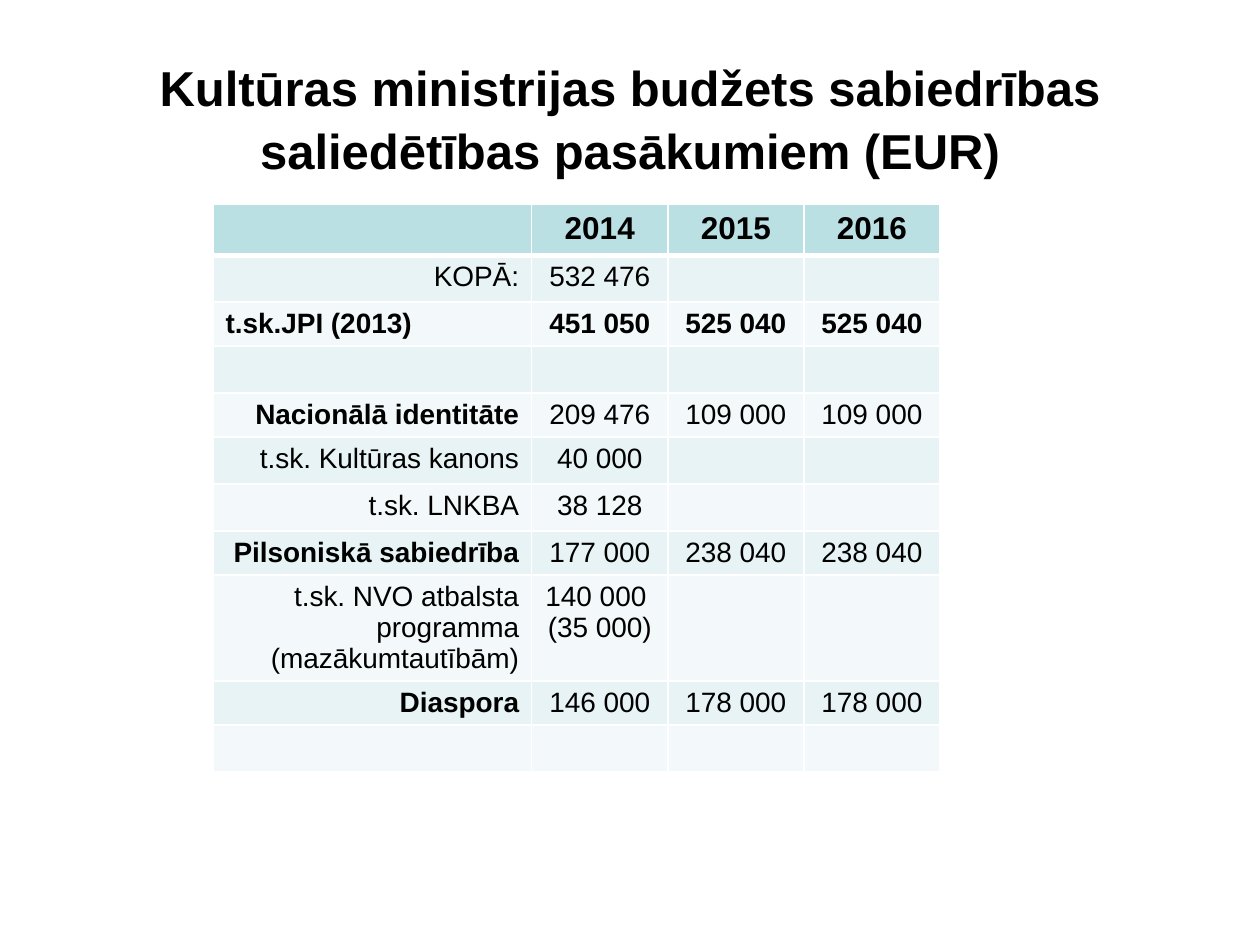
from typing import NamedTuple

from lxml.etree import SubElement as Sub
from pptx import Presentation as Deck
from pptx.dml.color import RGBColor
from pptx.enum.text import MSO_ANCHOR as Anchor, PP_ALIGN as Align
from pptx.oxml.ns import qn
from pptx.util import Inches, Pt

BLACK = RGBColor(0x00, 0x00, 0x00)
WHITE = RGBColor(0xFF, 0xFF, 0xFF)
TEAL = RGBColor(0xBB, 0xE0, 0xE3)
BANDS = (RGBColor(0xF3, 0xF9, 0xFA), RGBColor(0xE7, 0xF3, 0xF4))

TITLE = "Kultūras ministrijas budžets sabiedrības saliedētības pasākumiem (EUR)"
WIDTHS = (2.53, 1.08, 1.08, 1.08)


class Line(NamedTuple):
    label: str = ""
    sums: tuple = ("", "", "")
    strong: bool = False
    whole: bool = False
    side: Align = Align.RIGHT
    height: float = 0.35
    size: int = 16


LINES = (
    Line("", ("2014", "2015", "2016"), whole=True, height=0.38, size=18),
    Line("KOPĀ:", ("532 476", "", "")),
    Line("t.sk.JPI (2013)", ("451 050", "525 040", "525 040"),
         strong=True, whole=True, side=Align.LEFT),
    Line(),
    Line("Nacionālā identitāte", ("209 476", "109 000", "109 000"), strong=True),
    Line("t.sk. Kultūras kanons", ("40 000", "", "")),
    Line("t.sk. LNKBA", ("38 128", "", "")),
    Line("Pilsoniskā sabiedrība", ("177 000", "238 040", "238 040"), strong=True),
    Line("t.sk. NVO atbalsta programma (mazākumtautībām)",
         ("140 000 \n(35 000)", "", ""), height=0.84),
    Line("Diaspora", ("146 000", "178 000", "178 000"), strong=True),
    Line(),
)


def style(para, size: int, bold: bool, side: Align) -> None:
    para.alignment = side
    form = {"name": "Arial", "size": Pt(size), "bold": bold}
    for run in para.runs:
        for key, value in form.items():
            setattr(run.font, key, value)
        run.font.color.rgb = BLACK
    if not para.runs:
        Sub(para._p, qn("a:endParaRPr"), sz=str(size * 100))


def frame(cell, row: int) -> None:
    props = cell._tc.get_or_add_tcPr()
    wide = {"T": 3 if row == 1 else 1, "B": 3 if row == 0 else 1}
    for edge in "LRTB":
        line = Sub(props, qn(f"a:ln{edge}"), w=str(Pt(wide.get(edge, 1))))
        Sub(Sub(line, qn("a:solidFill")), qn("a:srgbClr"), val=str(WHITE))


def draw_row(table, row: int, line: Line) -> None:
    table.rows[row].height = Inches(line.height)
    for col, text in enumerate((line.label, *line.sums)):
        cell = table.cell(row, col)
        cell.text = text
        frame(cell, row)
        cell.fill.solid()
        cell.fill.fore_color.rgb = BANDS[row % 2] if row else TEAL
        bold = line.whole or (line.strong and col == 0)
        for para in cell.text_frame.paragraphs:
            style(para, line.size, bold, Align.CENTER if col else line.side)


def draw_title(slide) -> None:
    title = slide.shapes.title
    place = {"left": 0.5, "top": 0.3, "width": 9, "height": 1.25}
    for key, value in place.items():
        setattr(title, key, Inches(value))
    title.text = TITLE
    title.text_frame.vertical_anchor = Anchor.MIDDLE
    para = title.text_frame.paragraphs[0]
    para.line_spacing = 1.07
    style(para, 28, True, Align.CENTER)


def draw_table(slide) -> None:
    high = sum(line.height for line in LINES)
    table = slide.shapes.add_table(
        len(LINES), len(WIDTHS), Inches(1.69), Inches(1.62),
        Inches(sum(WIDTHS)), Inches(high)).table
    for col, width in zip(table.columns, WIDTHS):
        col.width = Inches(width)
    for row, line in enumerate(LINES):
        draw_row(table, row, line)


def main() -> None:
    deck = Deck()
    deck.slide_width, deck.slide_height = Inches(10), Inches(7.5)
    slide = deck.slides.add_slide(deck.slide_layouts[5])
    draw_title(slide)
    draw_table(slide)
    deck.save("out.pptx")


if __name__ == "__main__":
    main()
